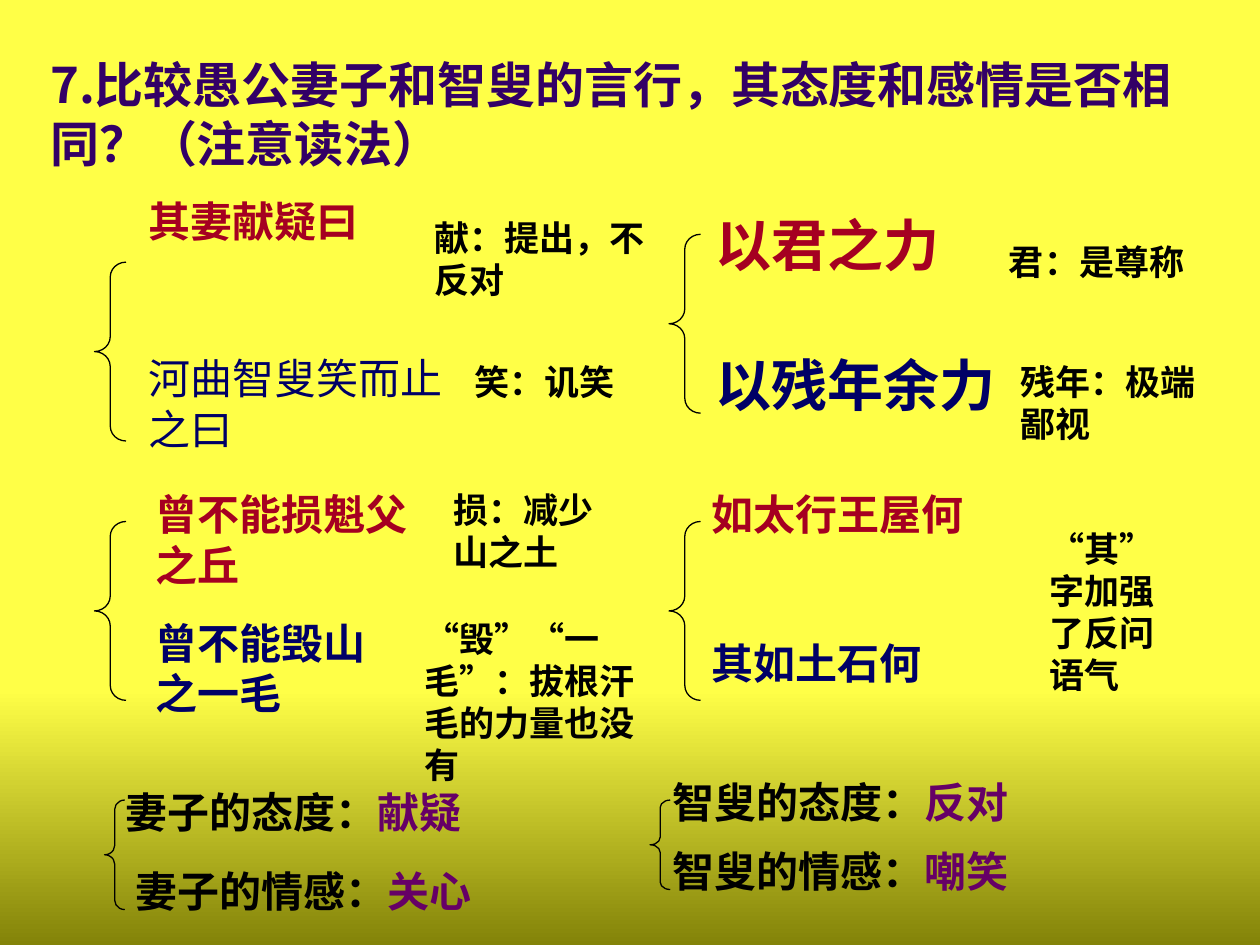
from pptx import Presentation
from pptx.dml.color import RGBColor
from pptx.enum.lang import MSO_LANGUAGE_ID
from pptx.enum.shapes import MSO_SHAPE
from pptx.enum.text import MSO_ANCHOR
from pptx.oxml.ns import qn
from pptx.util import Pt
from lxml import etree

BRACE = MSO_SHAPE.LEFT_BRACE
TOP, BOTTOM = MSO_ANCHOR.TOP, MSO_ANCHOR.BOTTOM
CHINESE = MSO_LANGUAGE_ID.SIMPLIFIED_CHINESE
SERIF, SANS = "Times New Roman", "Noto Sans CJK SC"
HEX = {
    "title": "330066", "wife": "A50021", "elder": "000066",
    "note": "000000", "mood": "660066",
    "light": "FFFF47", "dark": "838309",
}


def color(name):
    return RGBColor.from_string(HEX[name])


def paint(slide):
    """Fill the background, darkening towards the foot."""
    fill = slide.background.fill
    fill.gradient()
    fill.gradient_angle = 270
    for stop, (place, name) in zip(fill.gradient_stops,
                                   [(0.73, "light"), (1, "dark")]):
        stop.position = place
        stop.color.rgb = color(name)


def write(slide, box, runs, size, bold=True, font=SERIF, anchor=TOP):
    """Place one paragraph made of (text, color name) runs."""
    frame = slide.shapes.add_textbox(*map(Pt, box)).text_frame
    frame.word_wrap = True
    frame.vertical_anchor = anchor
    para = frame.paragraphs[0]
    for text, name in runs:
        run = para.add_run()
        run.text = text
        face = run.font
        face.name, face.size, face.bold = font, Pt(size), bold
        face.language_id = CHINESE
        face.color.rgb = color(name)
        east = etree.SubElement(face._element, qn("a:ea"))
        east.set("typeface", SANS)


def brace(slide, box, curve):
    shape = slide.shapes.add_shape(BRACE, *map(Pt, box))
    shape.adjustments[0] = curve
    shape.shadow.inherit = False
    shape.fill.background()
    shape.line.color.rgb = color("note")
    shape.line.width = Pt(0.75)


def contrast(slide, box, size, quotes, notes):
    """Brace two quotes, wife above elder, with notes to their right."""
    left, top = box[:2]
    brace(slide, box, 0.472)
    for name, (x, y, w, h, text, bold) in zip(("wife", "elder"), quotes):
        write(slide, (left + x, top + y, w, h), [(text, name)], size, bold)
    for x, y, w, h, text in notes:
        write(slide, (left + x, top + y, w, h), [(text, "note")], 20)


def stance(slide, box, curve, who, lines):
    """Brace a person's attitude and feeling."""
    left, top = box[:2]
    brace(slide, box, curve)
    for topic, (x, y, w, mood) in zip(("态度", "情感"), lines):
        runs = [(f"{who}的{topic}：", "note"), (mood, "mood")]
        write(slide, (left + x, top + y, w, 36), runs, 24)


def main():
    deck = Presentation()
    deck.slide_width, deck.slide_height = Pt(720), Pt(540)
    slide = deck.slides.add_slide(deck.slide_layouts[6])
    paint(slide)
    write(slide, (21.6, 12.2, 677.5, 90),
          [("7.比较愚公妻子和智叟的言行，其态度和感情是否相同？（注意读法）",
            "title")], 28, font=SANS, anchor=BOTTOM)

    west, east, low = 54, 382.3, 298
    wide, tall = 18, 102.2
    contrast(slide, (west, 149.8, wide, tall), 24,
             [(23.8, -41.8, 157, 36, "其妻献疑曰", True),
              (23.8, 48.2, 192.2, 65, "河曲智叟笑而止之曰", False)],
             [(187.2, -29.6, 136, 55, "献：提出，不反对"),
              (210.2, 52.5, 108, 31, "笑：讥笑")])
    contrast(slide, (east, 133.9, wide, tall), 32,
             [(19.5, -17.3, 156.2, 45, "以君之力", True),
              (19.5, 62.7, 203.8, 45, "以残年余力", True)],
             [(187.2, 0, 131.8, 31, "君：是尊称"),
              (193.7, 68.4, 120.2, 55, "残年：极端鄙视")])
    contrast(slide, (west, low, wide, tall), 24,
             [(28, -22.2, 162, 65, "曾不能损魁父之丘", True),
              (28, 51.2, 144, 65, "曾不能毁山之一毛", True)],
             [(198, -22.2, 108, 55, "损：减少山之土"),
              (181.4, 51.2, 144, 103, "“毁”“一毛”：拔根汗毛的力量也没有")])
    contrast(slide, (east, low, wide, tall), 24,
             [(17.3, -22.2, 240, 36, "如太行王屋何", True),
              (17.3, 62.7, 216, 36, "其如土石何", True)],
             [(210.3, 0, 77.8, 103, "“其”字加强了反问语气")])

    foot = 457.2
    stance(slide, (59.8, foot, 11.5, 62.6), 0.462, "妻子",
           [(5, -11.5, 294, "献疑"), (10.8, 33.8, 238, "关心")])
    stance(slide, (371.5, foot, 11.5, 51.1), 0.374, "智叟",
           [(5.8, -17.3, 300, "反对"), (5.8, 22.3, 300, "嘲笑")])
    deck.save("out.pptx")


if __name__ == "__main__":
    main()
